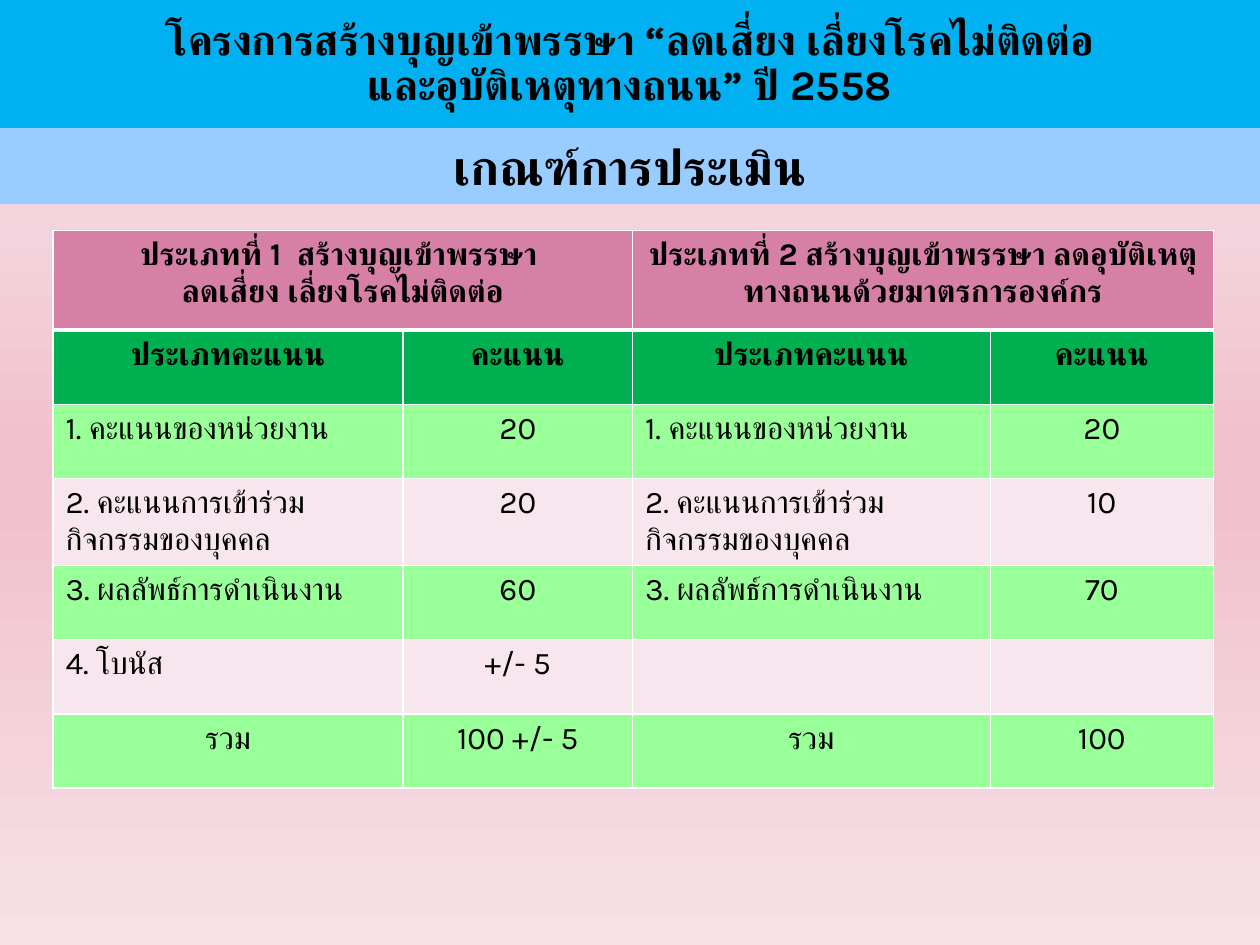
from copy import deepcopy
from pptx import Presentation
from pptx.dml.color import RGBColor
from pptx.enum.shapes import MSO_SHAPE as SHAPE
from pptx.enum.text import MSO_ANCHOR as ANCHOR, PP_ALIGN as ALIGN
from pptx.oxml import parse_xml
from pptx.oxml.ns import nsdecls
from pptx.util import Inches, Pt

FONT = "Karla"
rgb = RGBColor.from_string


def write(tf, text, size, bold, align=ALIGN.CENTER, spacing=None):
    """Write one paragraph per line of text."""
    for i, line in enumerate(text.split("\n")):
        p = tf.add_paragraph() if i else tf.paragraphs[0]
        p.alignment = align
        p.line_spacing = spacing
        r = p.add_run()
        r.text = line
        r.font.size, r.font.bold, r.font.name = Pt(size), bold, FONT
        r.font.color.rgb = rgb("000000")
        r.font._element.append(parse_xml(f'<a:cs {nsdecls("a")} typeface="{FONT}"/>'))


prs = Presentation()
prs.slide_width, prs.slide_height = Inches(10), Inches(7.5)
s = prs.slides.add_slide(prs.slide_layouts[6])

# Background: pink, deepest halfway down
bg = s.background.fill
bg.gradient()
bg.gradient_angle = 270
last_stop = s._element.xpath(".//p:bg//a:gs")[-1]
last_stop.addnext(deepcopy(last_stop))
for stop, (pos, color) in zip(bg.gradient_stops,
                              [(0, "F7E6ED"), (0.5, "F0C0CC"), (1, "F7E0E6")]):
    stop.position = pos
    stop.color.rgb = rgb(color)

# Title bands
bands = [
    (0, 1.02, "00B0F0", 24, 0.9,
     "โครงการสร้างบุญเข้าพรรษา “ลดเสี่ยง เลี่ยงโรคไม่ติดต่อ\nและอุบัติเหตุทางถนน” ปี 2558"),
    (1.02, 0.6, "99CCFF", 28, None, "เกณฑ์การประเมิน"),
]
for top, height, color, size, spacing, text in bands:
    sp = s.shapes.add_shape(SHAPE.RECTANGLE, 0, Inches(top), prs.slide_width, Inches(height))
    sp.shadow.inherit = False
    sp.fill.solid()
    sp.fill.fore_color.rgb = rgb(color)
    sp.line.fill.background()
    tf = sp.text_frame
    tf.word_wrap = True
    tf.vertical_anchor = ANCHOR.MIDDLE
    write(tf, text, size, True, spacing=spacing)

# Score table
agency, person, result = ("1. คะแนนของหน่วยงาน", "2. คะแนนการเข้าร่วมกิจกรรมของบุคคล",
                          "3. ผลลัพธ์การดำเนินงาน")
rows = [
    ("ประเภทที่ 1  สร้างบุญเข้าพรรษา \nลดเสี่ยง เลี่ยงโรคไม่ติดต่อ", "",
     "ประเภทที่ 2 สร้างบุญเข้าพรรษา ลดอุบัติเหตุทางถนนด้วยมาตรการองค์กร", ""),
    ("ประเภทคะแนน", "คะแนน") * 2,
    (agency, "20", agency, "20"),
    (person, "20", person, "10"),
    (result, "60", result, "70"),
    ("4. โบนัส", "+/- 5", "", ""),
    ("รวม", "100 +/- 5", "รวม", "100"),
]
row_fills = ["D680A5", "00B050"] + ["99FF99", "F7E6ED"] * 2 + ["99FF99"]
col_widths = [2.78, 1.82, 2.84, 1.77]
row_heights = [0.79] + [0.59] * 6

table = s.shapes.add_table(len(rows), len(col_widths), Inches(0.42), Inches(1.83),
                           Inches(sum(col_widths)), Inches(sum(row_heights))).table
for col, width in zip(table.columns, col_widths):
    col.width = Inches(width)
for row, height in zip(table.rows, row_heights):
    row.height = Inches(height)
for left in (0, 2):
    table.cell(0, left).merge(table.cell(0, left + 1))

for i, (texts, color) in enumerate(zip(rows, row_fills)):
    for j, text in enumerate(texts):
        cell = table.cell(i, j)
        cell.fill.solid()
        cell.fill.fore_color.rgb = rgb(color)
        is_item = 2 <= i < len(rows) - 1 and j % 2 == 0
        if text:
            write(cell.text_frame, text, 18, i < 2, ALIGN.LEFT if is_item else ALIGN.CENTER)
        for k, side in enumerate("LRTB"):
            thick = (i, side) in ((0, "B"), (1, "T"))
            cell._tc.get_or_add_tcPr().insert(k, parse_xml(
                f'<a:ln{side} {nsdecls("a")} w="{Pt(3 if thick else 1)}"><a:solidFill>'
                f'<a:srgbClr val="FFFFFF"/></a:solidFill></a:ln{side}>'))

prs.save("out.pptx")
